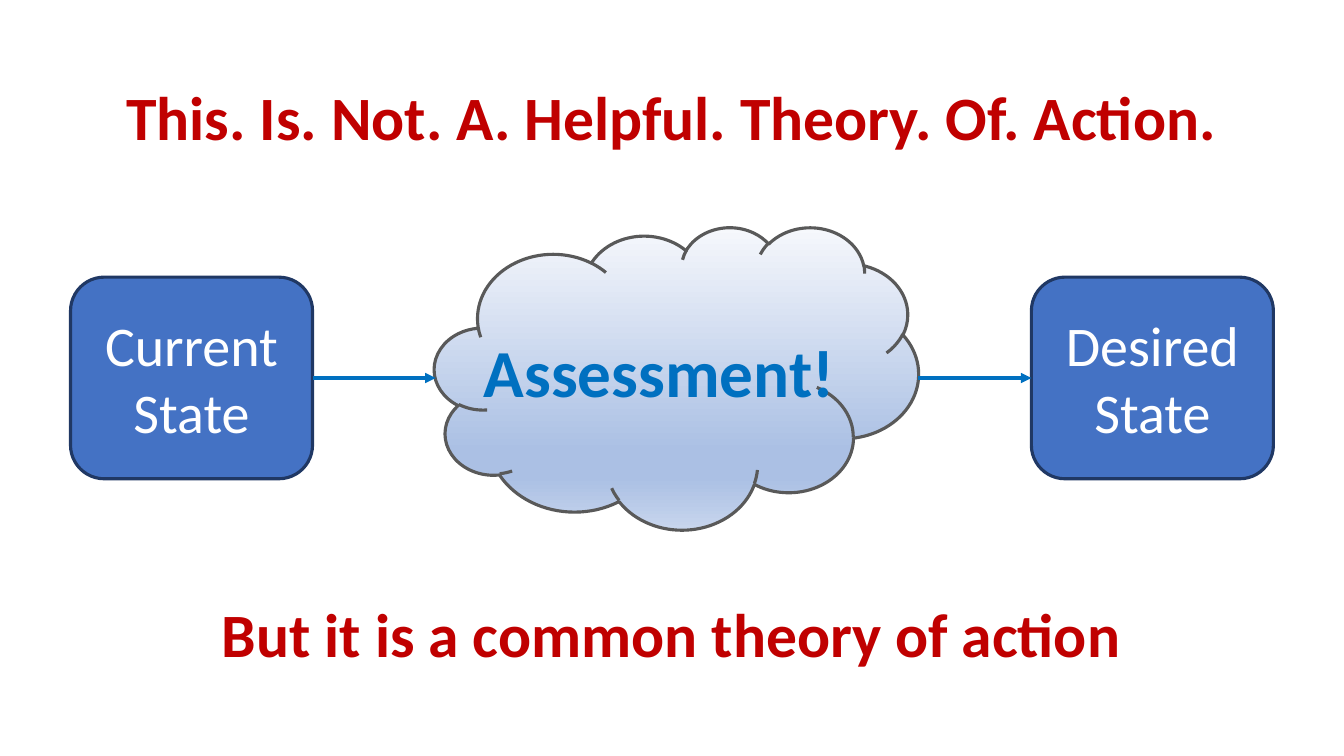
import copy

import lxml.etree
import pptx
import pptx.dml.color
import pptx.enum.shapes
import pptx.enum.text
import pptx.oxml
import pptx.oxml.ns
import pptx.util

Inches = pptx.util.Inches
Pt = pptx.util.Pt
qn = pptx.oxml.ns.qn
SHAPE = pptx.enum.shapes.MSO_SHAPE

COLORS = {
    "box": "4472C4",
    "box_line": "203864",
    "white": "FFFFFF",
    "accent": "0070C0",
    "cloud_line": "595959",
    "headline": "C00000",
}
CLOUD_STOPS = [(0, "F6F8FC"), (74, "ABC0E4"), (83, "ABC0E4"), (100, "C7D5ED")]


def rgb(name):
    """Return the named palette colour."""
    return pptx.dml.color.RGBColor.from_string(COLORS[name])


def write_text(tf, lines, size, color, bold=False):
    """Write one centred paragraph per line."""
    for i, line in enumerate(lines):
        p = tf.add_paragraph() if i else tf.paragraphs[0]
        p.text = line
        p.alignment = pptx.enum.text.PP_ALIGN.CENTER
        p.font.name = "Calibri"
        p.font.size = Pt(size)
        p.font.bold = bold
        p.font.color.rgb = rgb(color)


def add_headline(slide, text, left, top, width, height):
    """Add a bold red line of text across the given box."""
    sp = slide.shapes.add_textbox(Inches(left), Inches(top), Inches(width), Inches(height))
    sp.text_frame.word_wrap = True
    sp.text_frame.auto_size = pptx.enum.text.MSO_AUTO_SIZE.SHAPE_TO_FIT_TEXT
    write_text(sp.text_frame, [text], 44, "headline", bold=True)


def add_outlined_shape(slide, kind, line, left, top, width, height):
    """Add a shadowless preset shape with a vertically centred text frame."""
    sp = slide.shapes.add_shape(kind, Inches(left), Inches(top), Inches(width), Inches(height))
    sp.shadow.inherit = False
    sp.line.color.rgb = rgb(line)
    sp.line.width = Pt(2.25)
    sp.text_frame.vertical_anchor = pptx.enum.text.MSO_ANCHOR.MIDDLE
    return sp


def add_state(slide, lines, left, top, width, height):
    """Add a rounded box that names a state."""
    sp = add_outlined_shape(slide, SHAPE.ROUNDED_RECTANGLE, "box_line", left, top, width, height)
    sp.fill.solid()
    sp.fill.fore_color.rgb = rgb("box")
    sp.text_frame.word_wrap = True
    write_text(sp.text_frame, lines, 40, "white")
    return sp


def add_cloud(slide, text, left, top, width, height):
    """Add the gradient cloud with its white-edged label."""
    sp = add_outlined_shape(slide, SHAPE.CLOUD, "cloud_line", left, top, width, height)
    sp.fill.gradient()
    sp.fill.gradient_angle = 270
    stops = sp._element.spPr.find(qn("a:gradFill")).find(qn("a:gsLst"))
    template = copy.deepcopy(stops[0])
    for stop in list(stops):
        stops.remove(stop)
    for position, color in CLOUD_STOPS:
        stop = copy.deepcopy(template)
        stop.set("pos", str(position * 1000))
        for child in list(stop):
            stop.remove(child)
        lxml.etree.SubElement(stop, qn("a:srgbClr"), val=color)
        stops.append(stop)
    tf = sp.text_frame
    tf.word_wrap = False
    write_text(tf, [text], 48, "accent", bold=True)
    r_pr = tf.paragraphs[0].runs[0]._r.get_or_add_rPr()
    edge = lxml.etree.SubElement(r_pr, qn("a:ln"), w=str(Pt(0.75)))
    fill = lxml.etree.SubElement(edge, qn("a:solidFill"))
    lxml.etree.SubElement(fill, qn("a:srgbClr"), val=COLORS["white"])


def add_arrow(slide, start, end, y):
    """Add a horizontal arrow from start to end."""
    arrow = slide.shapes.add_connector(
        pptx.enum.shapes.MSO_CONNECTOR.STRAIGHT,
        Inches(start), Inches(y), Inches(end), Inches(y))
    arrow.line.color.rgb = rgb("accent")
    arrow.line.width = Pt(2.5)
    lxml.etree.SubElement(arrow.line._get_or_add_ln(), qn("a:tailEnd"), type="triangle")
    lxml.etree.SubElement(arrow._element.spPr, qn("a:effectLst"))
    return arrow


def add_flow(slide, left, top, width, height):
    """Add the flow from current state through the cloud to desired state."""
    box_w, box_h = 2.4, 2
    cloud_w = 4.8
    cloud_left = left + 3.61
    right = left + width - box_w
    middle = top + height / 2
    box_top = middle - box_h / 2
    desired = add_state(slide, ["Desired", "State"], right, box_top, box_w, box_h)
    current = add_state(slide, ["Current", "State"], left, box_top, box_w, box_h)
    add_cloud(slide, "Assessment!", cloud_left, top, cloud_w, height)
    add_arrow(slide, left + box_w, cloud_left + 0.01, middle).begin_connect(current, 3)
    add_arrow(slide, cloud_left + cloud_w - 0.01, right, middle).end_connect(desired, 1)


def main():
    """Build and save the slide."""
    prs = pptx.Presentation()
    prs.slide_width = Inches(13.33)
    prs.slide_height = Inches(7.5)
    slide = prs.slides.add_slide(prs.slide_layouts[6])
    left, width = 0.7, 11.93
    add_flow(slide, left, 2.25, width, 3)
    add_headline(slide, "This. Is. Not. A. Helpful. Theory. Of. Action.", left, 0.73, width, 0.84)
    add_headline(slide, "But it is a common theory of action", left, 5.86, width, 0.84)
    prs.save("out.pptx")


if __name__ == "__main__":
    main()
